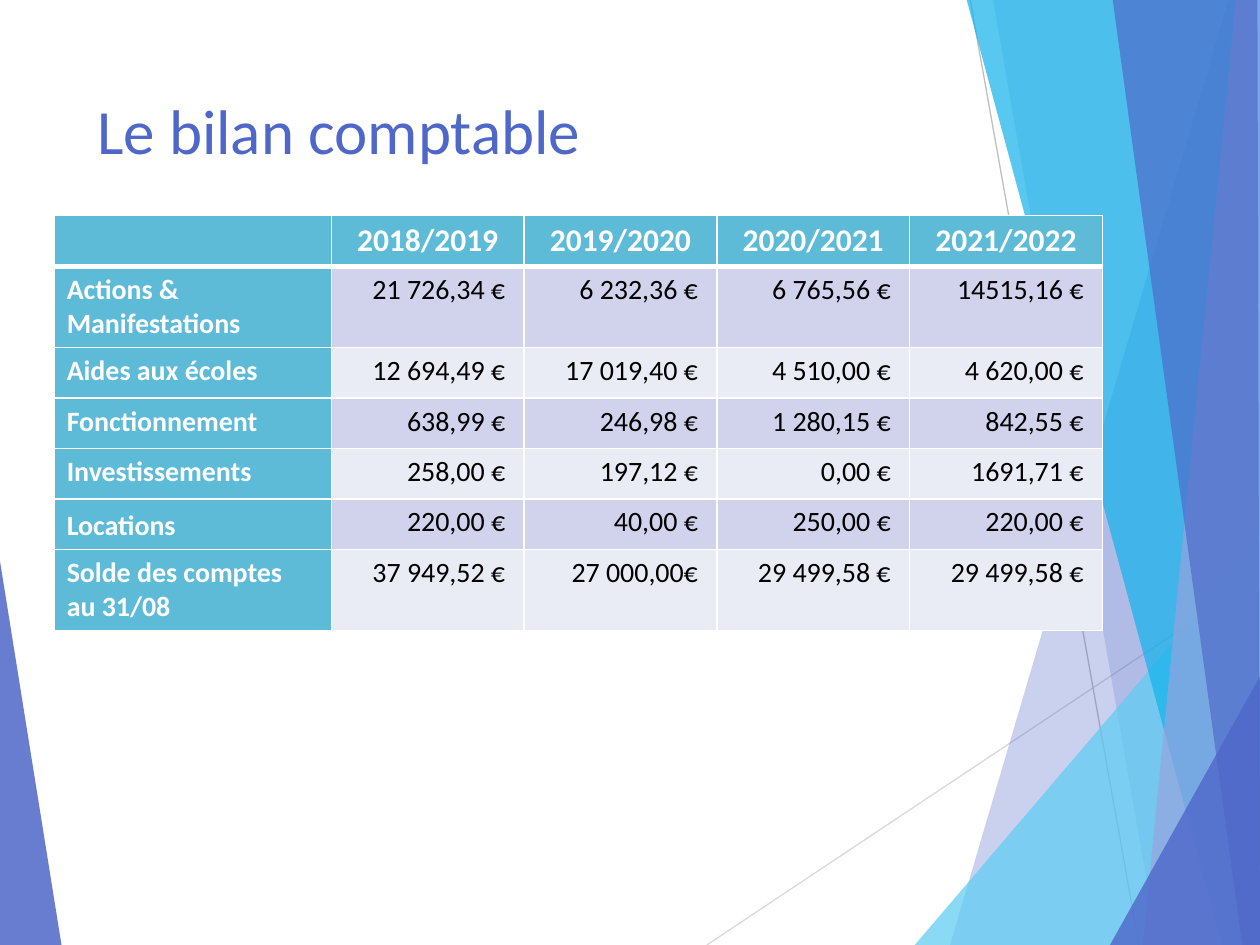
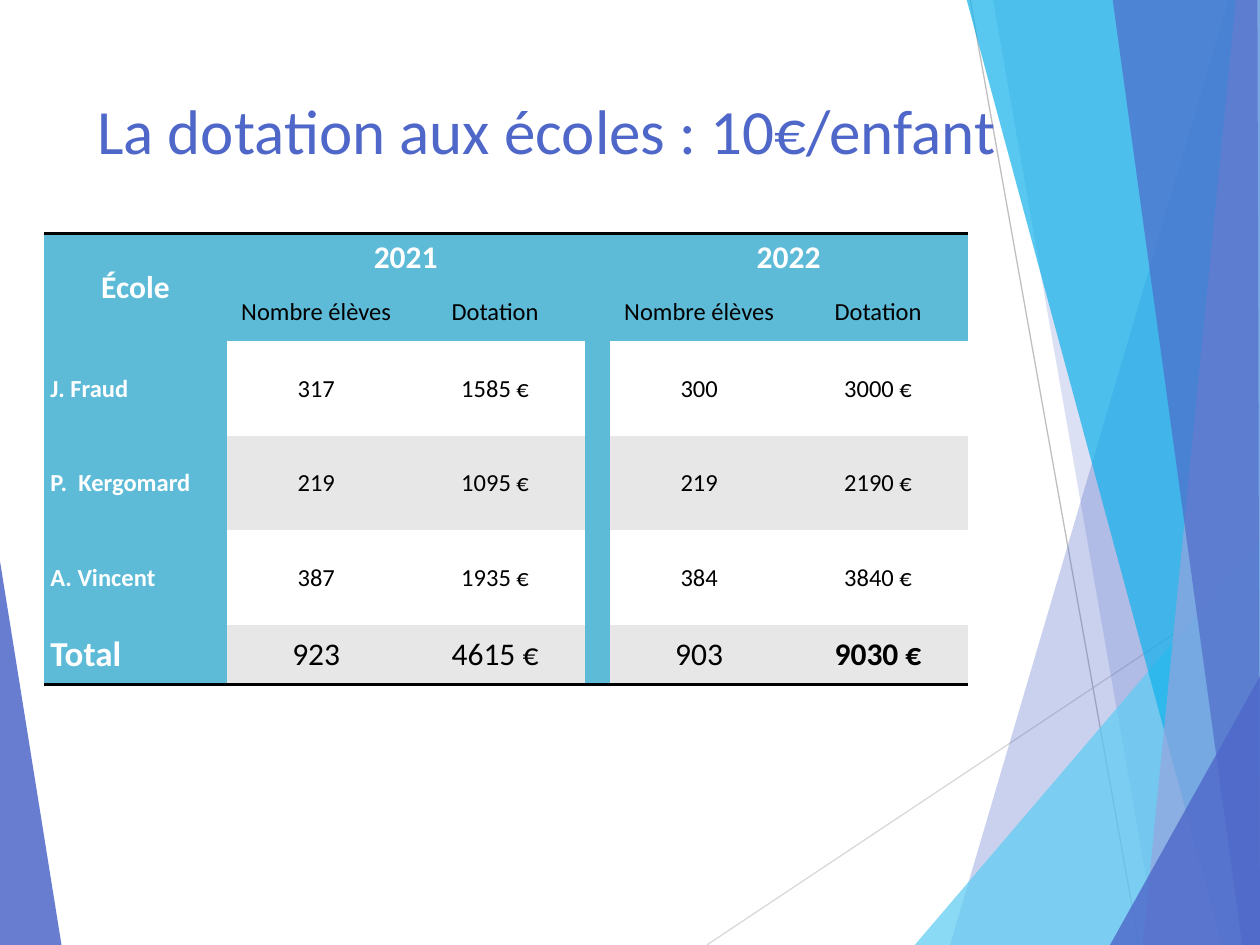
"""Builds two slides of an association's accounts: balance sheet and school grants."""
from dataclasses import dataclass

import pptx
import pptx.dml.color
import pptx.enum.shapes
import pptx.enum.text
import pptx.oxml
import pptx.oxml.ns
import pptx.util

Inches = pptx.util.Inches
Pt = pptx.util.Pt
RGB = pptx.dml.color.RGBColor
ALIGN = pptx.enum.text.PP_ALIGN
ANCHOR = pptx.enum.text.MSO_ANCHOR
qn = pptx.oxml.ns.qn

FONT = "Calibri"
NO_STYLE = "{2D5ABB26-0587-4C30-8999-92F81FD0307C}"
COLORS = {
    "blue": "4E67C8", "sky": "5ECCF3", "cyan": "12B2EB", "lavender": "95A4DE",
    "grey": "BFBFBF", "pale_grey": "D9D9D9", "teal": "5EBBD8",
    "band_dark": "D0D3EB", "band_light": "E9EBF5", "stripe": "E7E7E7",
    "white": "FFFFFF", "black": "000000",
}


@dataclass
class Band:
    color: str
    opacity: int
    points: list[tuple[float, float]]


@dataclass
class Ray:
    color: str
    start: tuple[float, float]
    end: tuple[float, float]


@dataclass
class Grid:
    left: float
    top: float
    cols: list[float]
    rows: list[float]
    cells: list[list[str]]


RAYS = [
    Ray("pale_grey", (5.61, 7.5), (10.01, 4.57)),
    Ray("grey", (7.7, 0), (9.04, 7.5)),
]
LEFT_BAND = Band("blue", 85, [(-0.01, 4.39), (0.49, 7.51), (-0.01, 7.5)])
RIGHT_BANDS = [
    Band("blue", 30, [(9.75, 0), (7.54, 7.5), (10.02, 7.51), (10.01, 0)]),
    Band("blue", 20, [(7.88, -0.01), (9.19, 7.5), (10.01, 7.5), (10.01, -0.01)]),
    Band("sky", 72, [(7.26, 7.5), (10, 4.29), (10.01, 7.5)]),
    Band("cyan", 70, [(7.67, -0.01), (9.7, 7.5), (10.01, 7.5), (10.01, -0.01)]),
    Band("lavender", 70, [(9.81, -0.01), (9.07, 7.5), (10.01, 7.5), (10, -0.01)]),
    Band("blue", 65, [(8.83, -0.01), (9.86, 7.5), (10, 7.5), (9.98, -0.01)]),
    Band("blue", 80, [(8.81, 7.5), (10.01, 5.35), (10.01, 7.5)]),
]

BALANCE = Grid(0.43, 1.71, [2.2] + [1.53] * 4, [0.4] * 7, [
    ["", "2018/2019", "2019/2020", "2020/2021", "2021/2022"],
    ["Actions & Manifestations", "21 726,34 €", "6 232,36 €", "6 765,56 €", "14515,16 €"],
    ["Aides aux écoles", "12 694,49 €", "17 019,40 €", "4 510,00 €", "4 620,00 €"],
    ["Fonctionnement", "638,99 €", "246,98 €", "1 280,15 €", "842,55 €"],
    ["Investissements", "258,00 €", "197,12 €", "0,00 €", "1691,71 €"],
    ["Locations", "220,00 €", "40,00 €", "250,00 €", "220,00 €"],
    ["Solde des comptes\nau 31/08", "37 949,52 €", "27 000,00€", "29 499,58 €", "29 499,58 €"],
])
GRANTS = Grid(0.35, 1.85, [1.45, 1.42, 1.42, 0.2, 1.42, 1.42],
              [0.39, 0.47, 0.75, 0.75, 0.75, 0.47], [
    ["École", "2021", "", "", "2022", ""],
    ["", "Nombre élèves", "Dotation", "", "Nombre élèves", "Dotation"],
    ["J. Fraud", "317", "1585 €", "", "300", "3000 €"],
    ["P.  Kergomard", "219", "1095 €", "", "219", "2190 €"],
    ["A. Vincent", "387", "1935 €", "", "384", "3840 €"],
    ["Total", "923", "4615 €", "", "903", "9030 €"],
])
GRANT_MERGES = [((0, 0), (1, 0)), ((0, 1), (0, 2)), ((0, 4), (0, 5))]
GAP_COL = 3


def rgb(name: str) -> RGB:
    return RGB.from_string(COLORS[name])


def write(tf, text: str, *, size: float, color: str, bold: bool = False, align=ALIGN.LEFT) -> None:
    tf.text = text
    for p in tf.paragraphs:
        p.alignment = align
        for r in p.runs:
            r.font.name, r.font.size, r.font.bold = FONT, Pt(size), bold
            r.font.color.rgb = rgb(color)


def add_band(slide, band: Band) -> None:
    start, *rest = [(Inches(x), Inches(y)) for x, y in band.points]
    builder = slide.shapes.build_freeform(*start)
    builder.add_line_segments(rest, close=True)
    sp = builder.convert_to_shape()
    sp.shadow.inherit = False
    sp.line.fill.background()
    sp.fill.solid()
    sp.fill.fore_color.rgb = rgb(band.color)
    clr = sp._element.spPr.find(".//" + qn("a:srgbClr"))
    clr.append(clr.makeelement(qn("a:alpha"), {"val": str(band.opacity * 1000)}))


def add_ray(slide, ray: Ray) -> None:
    ends = [Inches(v) for v in ray.start + ray.end]
    sp = slide.shapes.add_connector(pptx.enum.shapes.MSO_CONNECTOR.STRAIGHT, *ends)
    sp.line.color.rgb = rgb(ray.color)
    sp.line.width = Pt(0.75)
    spPr = sp._element.spPr
    spPr.append(spPr.makeelement(qn("a:effectLst"), {}))


def add_slide(prs, title: str, title_width: float):
    slide = prs.slides.add_slide(prs.slide_layouts[5])
    add_band(slide, LEFT_BAND)
    for ray in RAYS:
        add_ray(slide, ray)
    for band in RIGHT_BANDS:
        add_band(slide, band)
    sp = slide.shapes.title
    sp.left, sp.top = Inches(0.67), Inches(0.68)
    sp.width, sp.height = Inches(title_width), Inches(0.88)
    tf = sp.text_frame
    tf.word_wrap = True
    tf.auto_size = pptx.enum.text.MSO_AUTO_SIZE.NONE
    tf.vertical_anchor = ANCHOR.TOP
    write(tf, title, size=36, color="blue")
    slide.shapes._spTree.append(sp._element)
    return slide


def add_grid(slide, grid: Grid):
    frame = slide.shapes.add_table(
        len(grid.rows), len(grid.cols), Inches(grid.left), Inches(grid.top),
        Inches(sum(grid.cols)), Inches(sum(grid.rows)))
    table = frame.table
    table._tbl.tblPr.find(qn("a:tableStyleId")).text = NO_STYLE
    for col, width in zip(table.columns, grid.cols):
        col.width = Inches(width)
    for row, height in zip(table.rows, grid.rows):
        row.height = Inches(height)
    return table


def paint(cell, fill: str, borders: dict[str, tuple[str, float]]) -> None:
    tcPr = cell._tc.get_or_add_tcPr()
    for side in "LRTB":
        if side in borders:
            color, width = borders[side]
            tcPr.append(pptx.oxml.parse_xml(
                f'<a:ln{side} {pptx.oxml.ns.nsdecls("a")} w="{int(Pt(width))}"><a:solidFill>'
                f'<a:srgbClr val="{COLORS[color]}"/></a:solidFill></a:ln{side}>'))
    cell.fill.solid()
    cell.fill.fore_color.rgb = rgb(fill)


def balance_slide(prs) -> None:
    table = add_grid(add_slide(prs, "Le bilan comptable", 6.94), BALANCE)
    for i, texts in enumerate(BALANCE.cells):
        for j, text in enumerate(texts):
            cell = table.cell(i, j)
            head = i == 0 or j == 0
            borders = {side: ("white", 1) for side in "LRTB"}
            if i < 2:
                borders["B" if i == 0 else "T"] = ("white", 3)
            paint(cell, "teal" if head else ("band_light", "band_dark")[i % 2], borders)
            if not head:
                cell.margin_right = Inches(0.15)
            if text == "Locations":
                cell.margin_top = Inches(0.08)
            align = ALIGN.CENTER if i == 0 else ALIGN.LEFT if j == 0 else ALIGN.RIGHT
            write(cell.text_frame, text, size=18 if i == 0 else 16,
                  color="white" if head else "black", bold=head, align=align)


def grants_slide(prs) -> None:
    table = add_grid(add_slide(prs, "La dotation aux écoles : 10€/enfant", 7.72), GRANTS)
    last = len(GRANTS.rows) - 1
    for i, texts in enumerate(GRANTS.cells):
        for j, text in enumerate(texts):
            cell = table.cell(i, j)
            head = i == 0 or j == 0
            teal = i < 2 or j in (0, GAP_COL)
            borders = {0: {"T": ("black", 2)}, last: {"B": ("black", 2)}}.get(i, {})
            paint(cell, "teal" if teal else ("white", "stripe")[i % 2], borders)
            cell.margin_left = cell.margin_right = Inches(0.05)
            cell.margin_top = cell.margin_bottom = 0
            cell.vertical_anchor = ANCHOR.MIDDLE
            size = 20 if text == "Total" else 18 if i in (0, last) else 14
            write(cell.text_frame, text, size=size, color="white" if head else "black",
                  bold=head or (i == last and j == len(texts) - 1),
                  align=ALIGN.LEFT if j == 0 and i > 1 else ALIGN.CENTER)
    for start, end in GRANT_MERGES:
        table.cell(*start).merge(table.cell(*end))


def main() -> None:
    prs = pptx.Presentation()
    prs.slide_width, prs.slide_height = Inches(10), Inches(7.5)
    balance_slide(prs)
    grants_slide(prs)
    prs.save("out.pptx")


if __name__ == "__main__":
    main()
